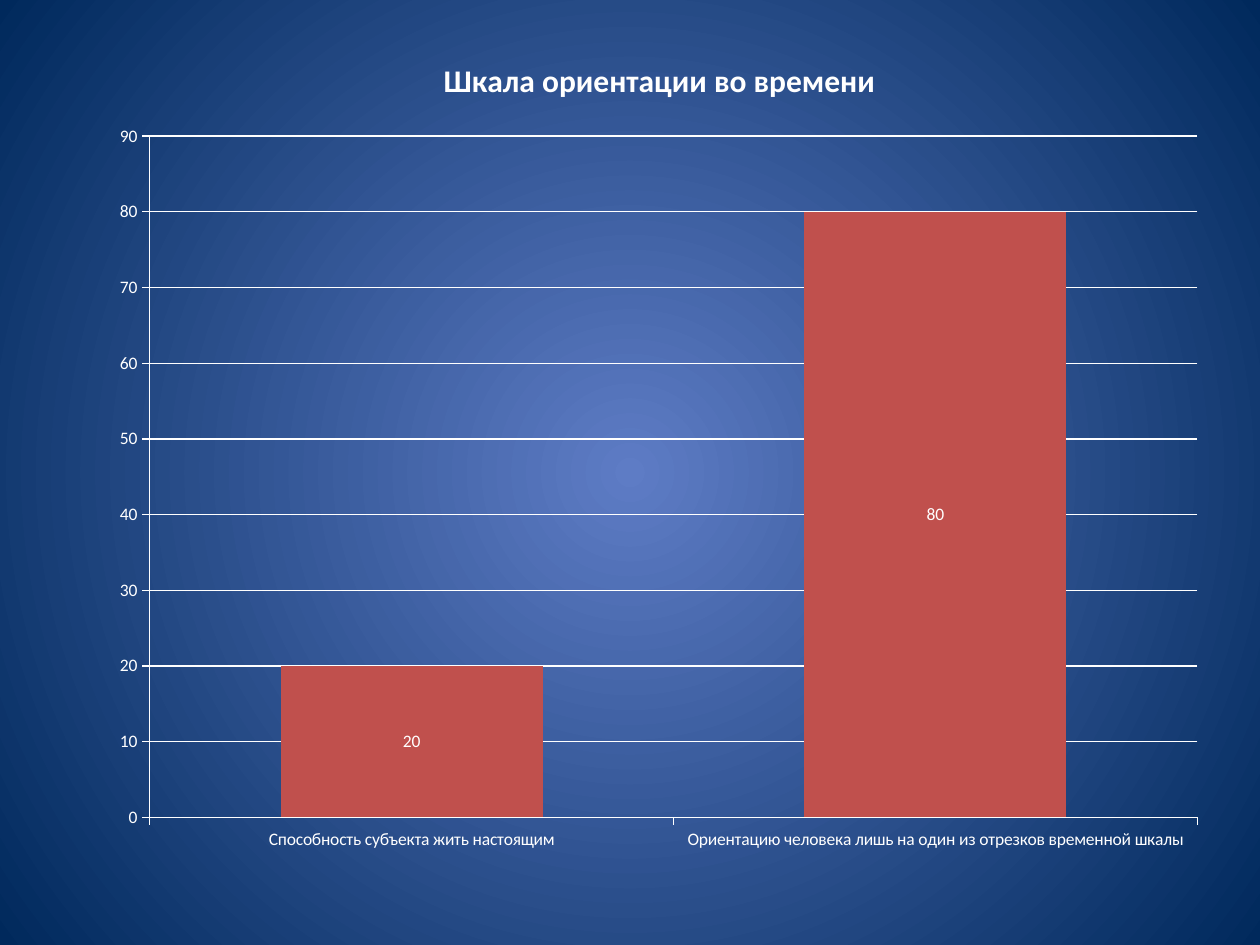
from lxml import etree
from pptx import Presentation
from pptx.chart.data import CategoryChartData
from pptx.dml.color import RGBColor
from pptx.enum.chart import XL_CHART_TYPE, XL_LABEL_POSITION, XL_TICK_MARK
from pptx.oxml import parse_xml
from pptx.oxml.ns import nsdecls, qn
from pptx.util import Emu, Pt

PX = 914400 // 126
FONT = "Calibri"
COLORS = {"center": "5E7CC5", "edge": "00295C", "bar": "C0504D", "text": "FFFFFF"}

TITLE = "Шкала ориентации во времени"
SCALE = [
    ("Способность субъекта жить настоящим", 20),
    ("Ориентацию человека лишь на один из отрезков временной шкалы", 80),
]
CHART_BOX = (98, 29, 1123, 837)
PLOT_BOX = (150, 136, 1048, 681)


def color(name):
    return RGBColor.from_string(COLORS[name])


def style_font(font, size, bold=False):
    font.name = FONT
    font.size = Pt(size)
    font.bold = bold
    font.color.rgb = color("text")


def paint_background(slide):
    """Fill the background with a gradient spreading from the middle."""
    fill = slide.background.fill
    fill.gradient()
    for stop, name in zip(fill.gradient_stops, ("center", "edge")):
        stop.color.rgb = color(name)
    linear = slide.element.xpath(".//p:bg//a:lin")[0]
    linear.getparent().replace(linear, parse_xml(
        f'<a:path {nsdecls("a")} path="circle">'
        '<a:fillToRect l="50000" t="50000" r="50000" b="50000"/></a:path>'))


def place_plot(chart):
    """Fix the inner plot area as fractions of the chart frame."""
    left, top, width, height = CHART_BOX
    x, y, w, h = PLOT_BOX
    fractions = {"x": (x - left) / width, "y": (y - top) / height,
                 "w": w / width, "h": h / height}
    plot_area = chart.element.xpath(".//c:plotArea")[0]
    for old in plot_area.findall(qn("c:layout")):
        plot_area.remove(old)
    layout = etree.Element(qn("c:layout"))
    manual = etree.SubElement(layout, qn("c:manualLayout"))
    settings = [("layoutTarget", "inner"), ("xMode", "edge"), ("yMode", "edge")]
    settings += [(key, f"{value:.3f}") for key, value in fractions.items()]
    for tag, value in settings:
        etree.SubElement(manual, qn(f"c:{tag}")).set("val", value)
    plot_area.insert(0, layout)


def add_scale_chart(slide):
    data = CategoryChartData()
    data.categories = [label for label, _ in SCALE]
    data.add_series("Series 1", [value for _, value in SCALE])
    chart = slide.shapes.add_chart(
        XL_CHART_TYPE.COLUMN_STACKED, *(Emu(n * PX) for n in CHART_BOX), data).chart
    style_font(chart.font, 10)
    chart.has_legend = False
    chart.has_title = True
    chart.chart_title.include_in_layout = False
    heading = chart.chart_title.text_frame
    heading.text = TITLE
    style_font(heading.paragraphs[0].runs[0].font, 18, bold=True)

    values = chart.value_axis
    values.minimum_scale, values.maximum_scale, values.major_unit = 0, 90, 10
    values.has_major_gridlines = True
    for axis in (chart.category_axis, values):
        axis.major_tick_mark = XL_TICK_MARK.OUTSIDE
        axis.minor_tick_mark = XL_TICK_MARK.NONE
        style_font(axis.tick_labels.font, 10)
    for line in (chart.category_axis.format.line, values.format.line,
                 values.major_gridlines.format.line):
        line.color.rgb = color("text")
        line.width = Pt(0.75)

    plot = chart.plots[0]
    plot.gap_width, plot.overlap = 100, 100
    plot.vary_by_categories = False
    bars = plot.series[0]
    bars.format.fill.solid()
    bars.format.fill.fore_color.rgb = color("bar")
    labels = bars.data_labels
    labels.show_value = True
    labels.position = XL_LABEL_POSITION.CENTER
    style_font(labels.font, 10)
    place_plot(chart)


def main():
    deck = Presentation()
    deck.slide_width, deck.slide_height = Emu(1260 * PX), Emu(945 * PX)
    slide = deck.slides.add_slide(deck.slide_layouts[6])
    paint_background(slide)
    add_scale_chart(slide)
    deck.save("out.pptx")


if __name__ == "__main__":
    main()
